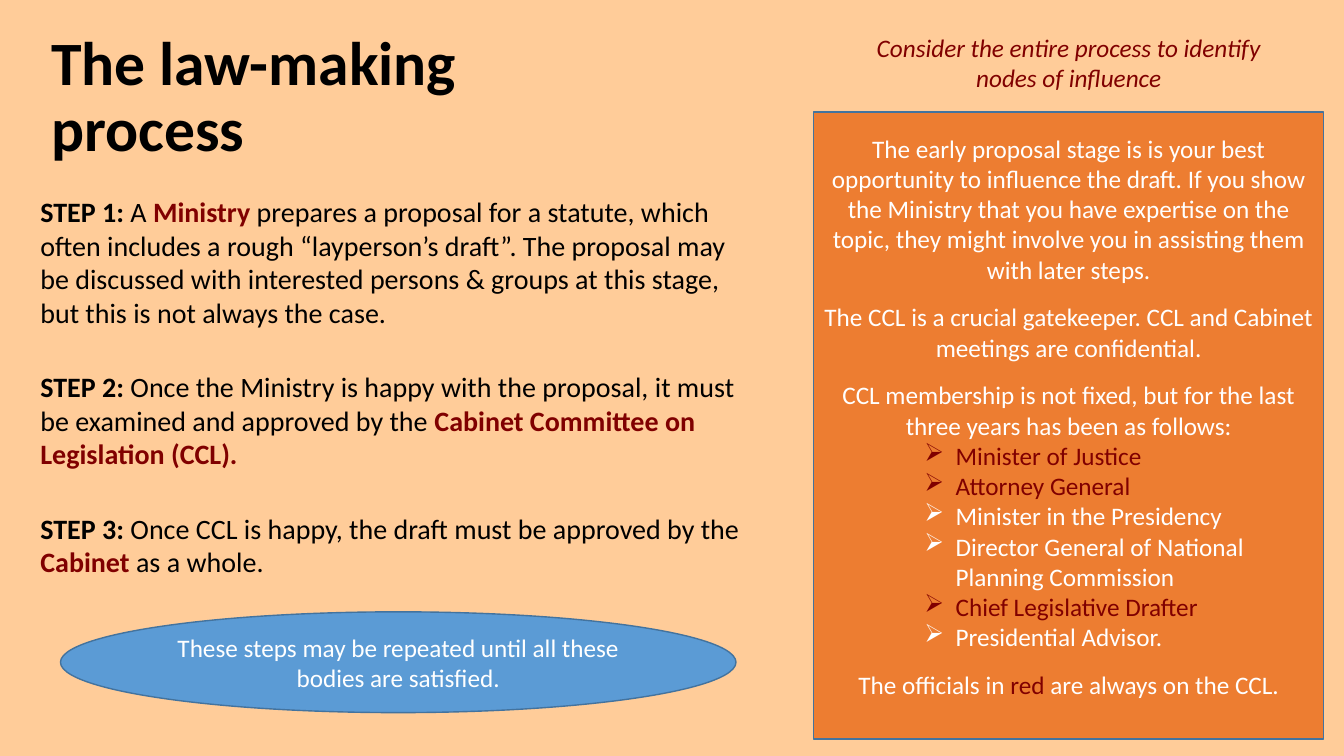
from lxml import etree
from pptx import Presentation
from pptx.dml.color import RGBColor
from pptx.enum import shapes, text
from pptx.oxml import ns
from pptx.util import Inches, Pt

COLORS = {
    "background": "FFCC99",
    "black": "000000",
    "red": "800000",
    "white": "FFFFFF",
    "orange": "ED7D31",
    "blue": "5B9BD5",
    "outline": "43739E",
}
CENTER, LEFT = text.PP_ALIGN.CENTER, text.PP_ALIGN.LEFT

# Each step is a list of (words, colour, bold)
STEPS = [
    [("STEP 1: ", "black", True), ("A ", "black", False), ("Ministry", "red", True),
     (" prepares a proposal for a statute, which often includes a rough “layperson’s draft”. "
      "The proposal may be discussed with interested persons & groups at this stage, "
      "but this is not always the case.", "black", False)],
    [("STEP 2: ", "black", True),
     ("Once the Ministry is happy with the proposal, it must be examined and approved by the ",
      "black", False),
     ("Cabinet Committee on Legislation (CCL).", "red", True)],
    [("STEP 3: ", "black", True),
     ("Once CCL is happy, the draft must be approved by the ", "black", False),
     ("Cabinet ", "red", True), ("as a whole.", "black", False)],
]
ADVICE = [
    "The early proposal stage is is your best opportunity to influence the draft. "
    "If you show the Ministry that you have expertise on the topic, "
    "they might involve you in assisting them with later steps.",
    "The CCL is a crucial gatekeeper. CCL and Cabinet meetings are confidential.",
    "CCL membership is not fixed, but for the last three years has been as follows:",
]
MEMBERS = [
    ("Minister of Justice", "red"),
    ("Attorney General", "red"),
    ("Minister in the Presidency", "white"),
    ("Director General of National Planning Commission", "white"),
    ("Chief Legislative Drafter", "red"),
    ("Presidential Advisor.", "white"),
]
CLOSING = [("The officials in ", "white", False), ("red ", "red", False),
           ("are always on the CCL.", "white", False)]


def rgb(name):
    return RGBColor.from_string(COLORS[name])


def place(shape, left, top, width, height):
    shape.left, shape.top = Inches(left), Inches(top)
    shape.width, shape.height = Inches(width), Inches(height)


def set_bullet(paragraph, char=None, margin=0, indent=0):
    """Give the paragraph a bullet character, or none, with its indents."""
    props = paragraph._p.get_or_add_pPr()
    props.set("marL", str(Inches(margin)))
    props.set("indent", str(Inches(indent)))
    bullet = etree.SubElement(props, ns.qn("a:buChar" if char else "a:buNone"))
    if char:
        bullet.set("char", char)


def write(paragraph, pieces, size, align=CENTER, before=0, italic=False):
    """Fill a paragraph with (words, colour, bold) pieces."""
    paragraph.alignment = align
    paragraph.space_before = Pt(before)
    for words, color, bold in pieces:
        run = paragraph.add_run()
        run.text = words
        font = run.font
        font.name, font.size = "Calibri", Pt(size)
        font.bold, font.italic = bold, italic
        font.color.rgb = rgb(color)


def next_paragraph(frame, index):
    return frame.add_paragraph() if index else frame.paragraphs[0]


def add_panel(slide, kind, box, fill):
    panel = slide.shapes.add_shape(kind, *map(Inches, box))
    panel.shadow.inherit = False
    panel.fill.solid()
    panel.fill.fore_color.rgb = rgb(fill)
    panel.line.color.rgb = rgb("outline")
    panel.line.width = Pt(1)
    frame = panel.text_frame
    frame.word_wrap = True
    frame.vertical_anchor = text.MSO_ANCHOR.MIDDLE
    return frame


def add_title(slide):
    title = slide.shapes.title
    place(title, 0.41, 0.46, 6.02, 1.04)
    frame = title.text_frame
    frame.auto_size = text.MSO_AUTO_SIZE.NONE
    frame.vertical_anchor = text.MSO_ANCHOR.MIDDLE
    heading = frame.paragraphs[0]
    heading.line_spacing = 0.9
    write(heading, [("The law-making process", "black", True)], 44, LEFT)


def add_steps(slide):
    steps = slide.placeholders[1]
    place(steps, 0.3, 1.88, 7.29, 4.05)
    frame = steps.text_frame
    frame.auto_size = text.MSO_AUTO_SIZE.NONE
    for index, pieces in enumerate(STEPS):
        step = next_paragraph(frame, index)
        set_bullet(step)
        write(step, pieces, 20, LEFT, before=29 if index else 0)


def add_hint(slide):
    hint = slide.shapes.add_textbox(*map(Inches, (8.47, 0.27, 4.26, 0.71)))
    hint.text_frame.word_wrap = True
    write(hint.text_frame.paragraphs[0],
          [("Consider the entire process to identify nodes of influence", "red", False)],
          18, italic=True)


def add_advice(slide):
    frame = add_panel(slide, shapes.MSO_SHAPE.RECTANGLE, (8.07, 1.11, 5.06, 6.22), "orange")
    frame.margin_bottom = Inches(0.23)
    gap = 12.5
    for index, words in enumerate(ADVICE):
        write(next_paragraph(frame, index), [(words, "white", False)], 18,
              before=gap if index else 0)
    for member, color in MEMBERS:
        entry = frame.add_paragraph()
        set_bullet(entry, "➢", 1.31, -0.31)
        write(entry, [(member, color, False)], 18, LEFT)
    write(frame.add_paragraph(), CLOSING, 18, before=gap)


def add_repeat_note(slide):
    frame = add_panel(slide, shapes.MSO_SHAPE.OVAL, (0.6, 6.07, 6.7, 1), "blue")
    write(frame.paragraphs[0],
          [("These steps may be repeated until all these bodies are satisfied.", "white", False)],
          18)


def main():
    deck = Presentation()
    deck.slide_width, deck.slide_height = Inches(13.33), Inches(7.5)
    slide = deck.slides.add_slide(deck.slide_layouts[1])
    slide.background.fill.solid()
    slide.background.fill.fore_color.rgb = rgb("background")

    # Left: the steps of the process
    add_title(slide)
    add_steps(slide)

    # Right: where to have influence
    add_hint(slide)
    add_advice(slide)

    # Bottom left: the loop
    add_repeat_note(slide)
    deck.save("out.pptx")


if __name__ == "__main__":
    main()
